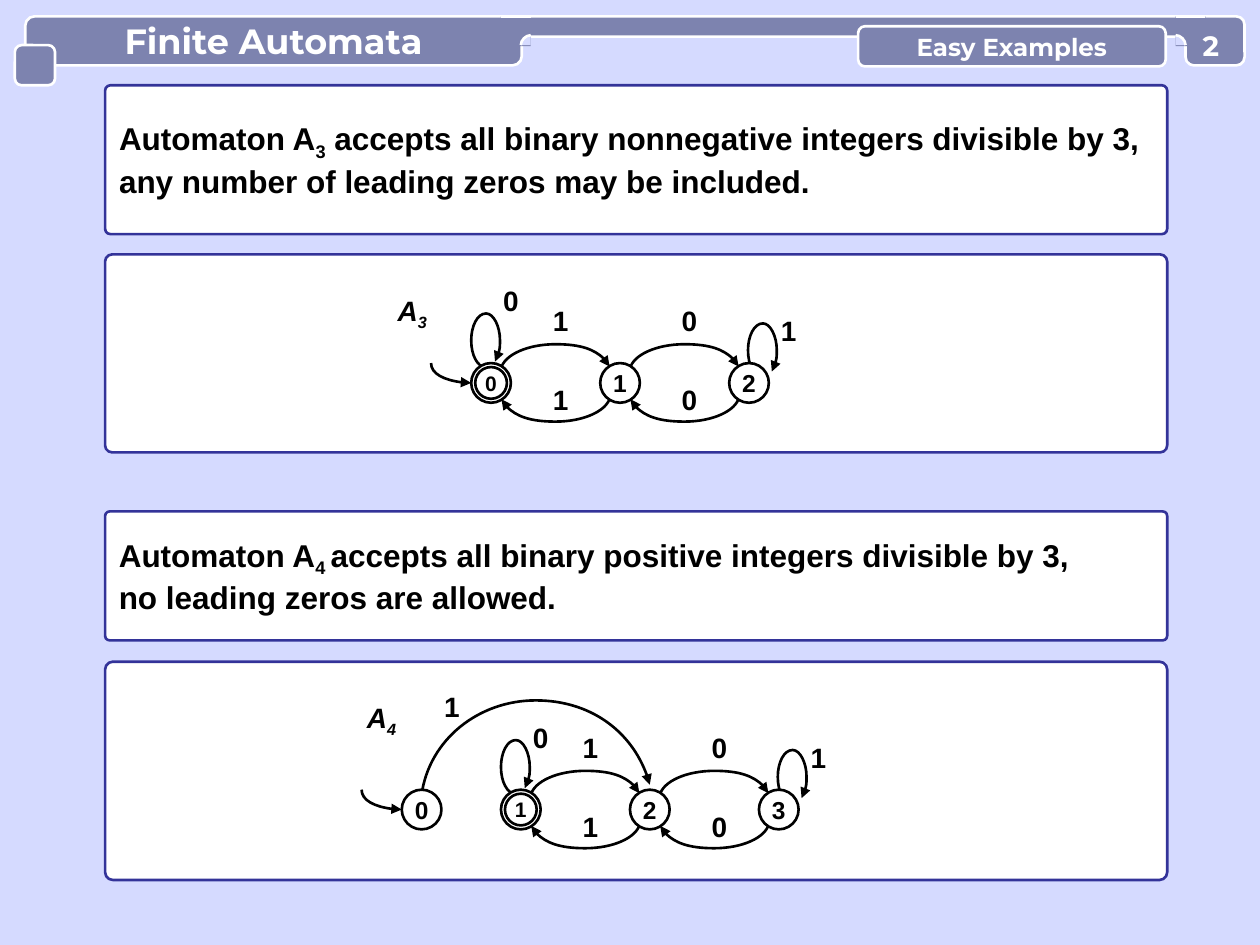
from pptx import Presentation
from pptx.dml.color import RGBColor
from pptx.enum.shapes import MSO_CONNECTOR as Link, MSO_SHAPE as Kind
from pptx.enum.text import MSO_ANCHOR as Anchor, MSO_AUTO_SIZE as Fit, PP_ALIGN as Align
from pptx.oxml.ns import qn
from pptx.util import Cm, Pt
from lxml.etree import SubElement

BLACK, WHITE, SLATE, NAVY, SKY = "000000", "FFFFFF", "7D83AF", "333399", "D5DAFF"
SPACING = 2.6
DIAMETER = 0.8
ARC = [(2.39, -0.33), (2.28, -0.6), (1.83, -0.78), (1.3, -0.78),
       (0.74, -0.78), (0.27, -0.57), (0.2, -0.29)]
LOOP = [(0.08, -0.43), (0.15, -0.53), (0.18, -0.69), (0.18, -0.86),
        (0.18, -1.14), (0.05, -1.4), (-0.1, -1.4),
        (-0.28, -1.4), (-0.4, -1.14), (-0.4, -0.86),
        (-0.4, -0.56), (-0.28, -0.33), (-0.1, -0.3)]
ENTRY = [(-0.4, 0), (-0.83, 0), (-1.21, -0.18), (-1.21, -0.4)]
BRIDGE = [(2.6, -0.5), (2.34, -1.5), (1.4, -2.2), (0.3, -2.2),
          (-0.86, -2.2), (-1.85, -1.4), (-2, -0.3)]


def color(value):
    """Turn a hex string into a colour."""
    return RGBColor.from_string(value)


def paint(shape, fill=None, line=None):
    """Set the fill and outline of a shape and drop its shadow."""
    shape.shadow.inherit = False
    if fill:
        shape.fill.solid()
        shape.fill.fore_color.rgb = color(fill)
    else:
        shape.fill.background()
    if line:
        shape.line.color.rgb = color(line)
        shape.line.width = Pt(1.5)
    else:
        shape.line.fill.background()


def write(shape, lines, size, ink=BLACK, font="Arial", align=Align.CENTER,
          anchor=Anchor.MIDDLE, inset=0, wrap=False, italic=False):
    """Write lines of pieces, in which every second piece is a subscript."""
    frame = shape.text_frame
    frame.auto_size = Fit.NONE
    frame.word_wrap = wrap
    frame.vertical_anchor = anchor
    frame.margin_left = frame.margin_right = Cm(inset)
    frame.margin_top = frame.margin_bottom = 0
    for row, pieces in enumerate(lines):
        para = frame.add_paragraph() if row else frame.paragraphs[0]
        para.alignment = align
        para.font.name, para.font.size = font, Pt(size)
        para.font.bold, para.font.italic = True, italic
        para.font.color.rgb = color(ink)
        for place, piece in enumerate(pieces):
            span = para.add_run()
            span.text = piece
            if place % 2:
                span.font._element.set("baseline", "-25000")


def add_block(page, kind, box, fill, line=None, radius=None):
    """Add a preset shape in a box of centimetres."""
    shape = page.shapes.add_shape(kind, *map(Cm, box))
    if radius is not None:
        shape.adjustments[0] = radius
    paint(shape, fill, line)
    return shape


def add_curve(page, origin, points, line=None, fill=None, corner=None, arrow=False):
    """Add a chain of Bezier curves, closed through a corner if one is given."""
    ends = points + [corner] if corner else points
    start, *rest = [(Cm(origin[0] + x), Cm(origin[1] + y)) for x, y in ends]
    builder = page.shapes.build_freeform(*start)
    builder.add_line_segments(rest, close=bool(corner))
    shape = builder.convert_to_shape()
    steps = list(shape.element.iter(qn("a:lnTo")))
    for first, second, third in zip(steps[::3], steps[1::3], steps[2::3]):
        first.tag = qn("a:cubicBezTo")
        for step in (second, third):
            first.append(step[0])
            step.getparent().remove(step)
    paint(shape, fill, line)
    if arrow:
        outline = shape.element.spPr.find(qn("a:ln"))
        SubElement(outline, qn("a:headEnd"), type="triangle")


def add_joint(page, outer, top, side):
    """Add the rounded inner corner where a tab meets the header strip."""
    left = min(outer, outer + 0.6 * side)
    add_block(page, Kind.RECTANGLE, (left, top, 0.6, 0.6), SLATE)
    edge = page.shapes.add_connector(
        Link.STRAIGHT, Cm(left), Cm(top), Cm(left + 0.6), Cm(top))
    edge.line.color.rgb = color(WHITE)
    edge.line.width = Pt(1.5)
    SubElement(edge._element.spPr, qn("a:effectLst"))
    bend = [(0, 0), (0.1 * side, 0), (0.2 * side, 0.1), (0.2 * side, 0.2)]
    origin = outer, top + 0.38
    add_curve(page, origin, bend, fill=SKY, corner=(0, 0.2))
    add_curve(page, origin, bend, line=WHITE)


def add_header(page, box, heading, topic, number):
    """Build the header with its title, topic and page number."""
    left, top, width, height = box
    right = left + width

    def tab(place, radius=0.17):
        return add_block(page, Kind.ROUNDED_RECTANGLE, place, SLATE, WHITE, radius)

    bar = (left, top, 10.01, height)
    tab(bar, 0.19)
    title = page.shapes.title
    title.left, title.top, title.width, title.height = map(Cm, bar)
    title.element.getparent().append(title.element)
    write(title, [[heading]], 20, WHITE, "Montserrat")
    tab((left + 9.8, top, 13.79, 0.41), 0.5)
    add_joint(page, left + 10.19, top, -1)
    tab((left - 0.21, top + 0.58, 0.81, 0.81))
    tab((right - 1.19, top, 1.19, height))
    add_joint(page, right - 1.39, top, 1)
    write(tab((right - 7.79, top + 0.2, 6.2, 0.81)), [[topic]], 14, WHITE, "Montserrat")
    digit = page.shapes.add_textbox(*map(Cm, (right - 1.19, top + 0.23, 1.02, 0.69)))
    write(digit, [[number]], 16, WHITE, "Montserrat", wrap=True)


def add_panel(page, box):
    """Add a white panel with a navy outline."""
    return add_block(page, Kind.ROUNDED_RECTANGLE, box, WHITE, NAVY, 0.035)


def add_statement(page, box, lines):
    """Add a panel that states what an automaton accepts."""
    write(add_panel(page, box), lines, 18, align=Align.LEFT, inset=0.25, wrap=True)


def add_label(page, x, y, pieces, italic=False):
    """Add a label in a small square centred on a point."""
    half = DIAMETER / 2
    label = page.shapes.add_textbox(*map(Cm, (x - half, y - half, DIAMETER, DIAMETER)))
    write(label, [pieces], 16, anchor=Anchor.TOP, wrap=True, italic=italic)


def add_state(page, x, y, name, final=False):
    """Add a state, with a second ring if it is final."""
    for size in (DIAMETER, 0.64) if final else (DIAMETER,):
        box = (x - size / 2, y - size / 2, size, size)
        state = add_block(page, Kind.OVAL, box, WHITE, BLACK)
    write(state, [[name]], 12 if final else 14)


def add_arrow(page, x, y, points):
    """Add a curved transition whose head is at its first point."""
    add_curve(page, (x, y), points, BLACK, arrow=True)


def add_remainders(page, x, y, names, zero):
    """Add the three remainder states and the transitions among them."""
    back = [(SPACING - px, -py) for px, py in ARC]
    last = x + 2 * SPACING
    add_arrow(page, x, y, LOOP)
    add_arrow(page, last + 0.38, y + 0.2, LOOP)
    for place, digit in enumerate("10"):
        left = x + place * SPACING
        add_arrow(page, left, y, ARC)
        add_arrow(page, left, y, back)
        add_label(page, left + 1.4, y - 1.2, [digit])
        add_label(page, left + 1.4, y + 0.4, [digit])
    for place, name in enumerate(names):
        add_state(page, x + place * SPACING, y, name, final=place == 0)
    add_label(page, x + 0.4, y - zero, ["0"])
    add_label(page, last + 0.8, y - 1, ["1"])


def add_automaton_3(page, box):
    """Draw the automaton that permits leading zeros."""
    add_panel(page, box)
    x, y = box[0] + 7.78, box[1] + 2.59
    add_arrow(page, x, y, ENTRY)
    add_remainders(page, x, y, "012", 1.6)
    add_label(page, x - 1.59, y - 1.4, ["A", "3"], italic=True)


def add_automaton_4(page, box):
    """Draw the automaton with a separate start state."""
    add_panel(page, box)
    x, y = box[0] + 8.38, box[1] + 2.98
    start = x - 2
    add_arrow(page, start, y, ENTRY)
    add_arrow(page, x, y, BRIDGE)
    add_remainders(page, x, y, "123", 1.4)
    add_state(page, start, y, "0")
    add_label(page, x - 1.39, y - 2.02, ["1"])
    add_label(page, x - 2.81, y - 1.8, ["A", "4"], italic=True)


def main():
    """Build the slide and save it."""
    deck = Presentation()
    deck.slide_width, deck.slide_height = Cm(25.4), Cm(19.05)
    page = deck.slides.add_slide(deck.slide_layouts[5])
    page.background.fill.solid()
    page.background.fill.fore_color.rgb = color(SKY)
    add_header(page, (0.51, 0.33, 24.58, 0.99), "Finite Automata", "Easy Examples", "2")
    left, width = 2.12, 21.41
    add_statement(page, (left, 1.72, width, 3), [
        ["Automaton A", "3", " accepts all binary nonnegative integers divisible by 3,"],
        ["any number of leading zeros may be included."]])
    add_automaton_3(page, (left, 5.13, width, 3.99))
    add_statement(page, (left, 10.31, width, 2.6), [
        ["Automaton A", "4 ", "accepts all binary positive integers divisible by 3,"],
        ["no leading zeros are allowed."]])
    add_automaton_4(page, (left, 13.34, width, 4.4))
    deck.save("out.pptx")


if __name__ == "__main__":
    main()
